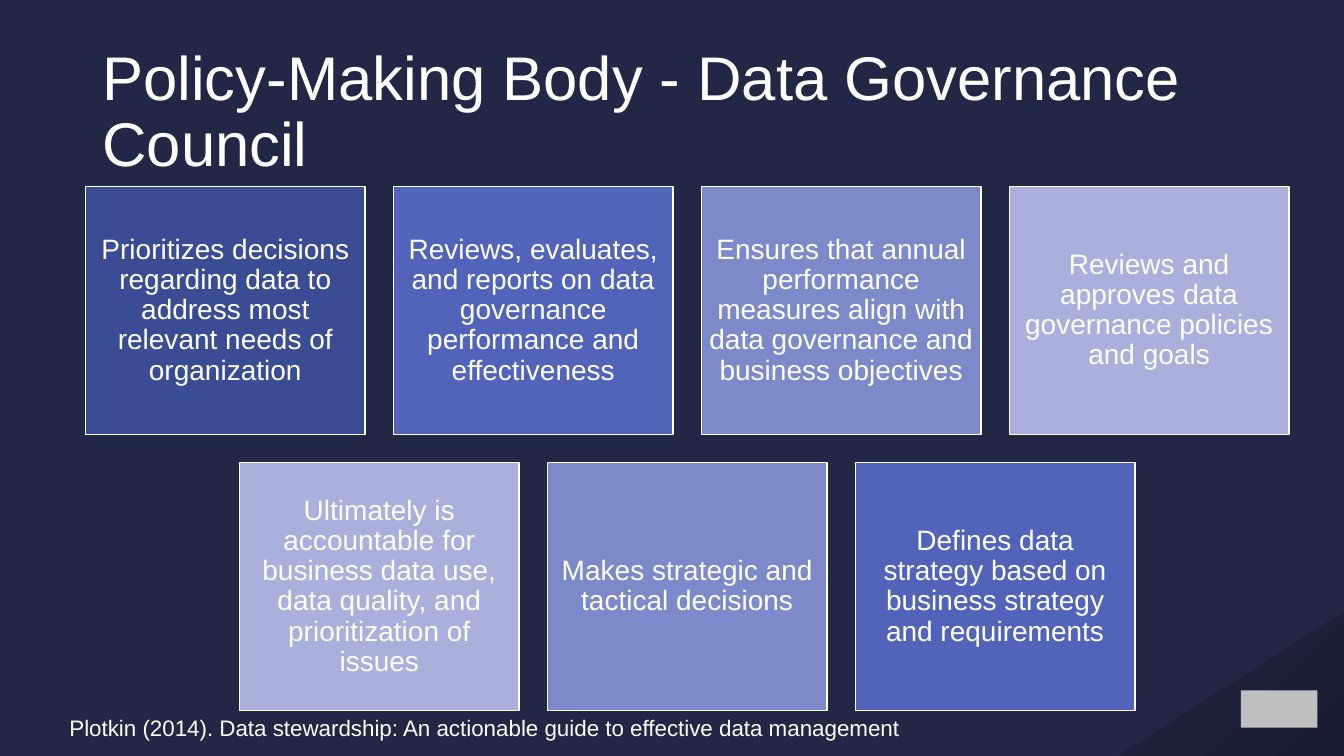
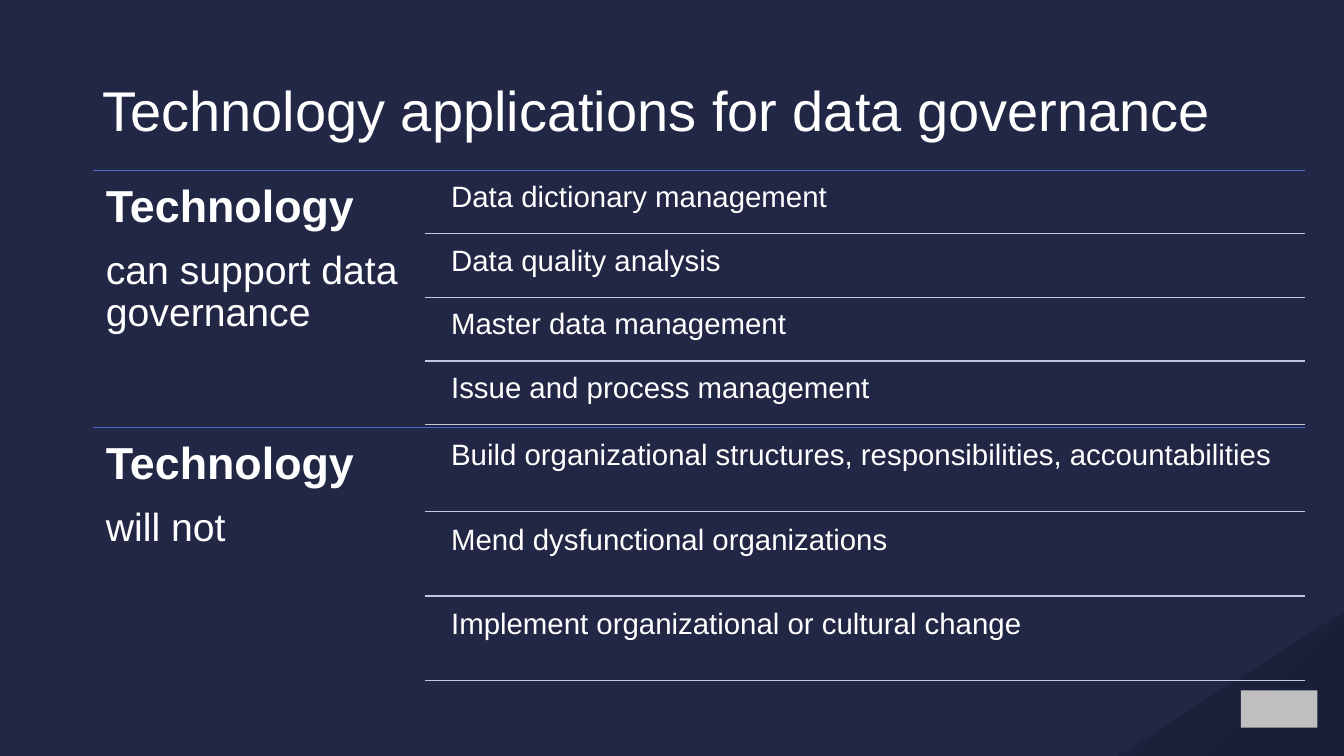
from lxml.etree import SubElement
from pptx import Presentation
from pptx.dml.color import RGBColor
from pptx.enum.shapes import MSO_CONNECTOR, MSO_SHAPE
from pptx.enum.text import MSO_ANCHOR, PP_ALIGN
from pptx.oxml.ns import qn
from pptx.util import Cm, Pt

# Palette and font
FONT = "Arial"
NAVY = RGBColor(0x21, 0x27, 0x45)
CORNER_LIGHT = RGBColor(0x1E, 0x23, 0x3E)
CORNER_DARK = RGBColor(0x19, 0x1D, 0x34)
WHITE = RGBColor(0xFF, 0xFF, 0xFF)
GREY = RGBColor(0xBF, 0xBF, 0xBF)
RULE_BLUE = RGBColor(0x4E, 0x67, 0xC8)
RULE_PALE = RGBColor(0xC2, 0xC7, 0xE6)
BLUE_1 = RGBColor(0x3A, 0x4C, 0x94)
BLUE_2 = RGBColor(0x51, 0x64, 0xB9)
BLUE_3 = RGBColor(0x7D, 0x8A, 0xCA)
BLUE_4 = RGBColor(0xA8, 0xB0, 0xDB)

# Content
COUNCIL_TITLE = "Policy-Making Body - Data Governance Council"
COUNCIL_ROWS = [
    [
        ("Prioritizes decisions regarding data to address most relevant needs of organization", BLUE_1),
        ("Reviews, evaluates, and reports on data governance performance and effectiveness", BLUE_2),
        ("Ensures that annual performance measures align with data governance and business objectives", BLUE_3),
        ("Reviews and approves data governance policies and goals", BLUE_4),
    ],
    [
        ("Ultimately is accountable for business data use, data quality, and prioritization of issues", BLUE_4),
        ("Makes strategic and tactical decisions", BLUE_3),
        ("Defines data strategy based on business strategy and requirements", BLUE_2),
    ],
]
COUNCIL_SOURCE = "Plotkin (2014). Data stewardship: An actionable guide to effective data management"

TECH_TITLE = "Technology applications for data governance"
TECH_SECTIONS = [
    ("Technology", "can support data governance", [
        "Data dictionary management",
        "Data quality analysis",
        "Master data management",
        "Issue and process management",
    ]),
    ("Technology", "will not", [
        "Build organizational structures, responsibilities, accountabilities",
        "Mend dysfunctional organizations",
        "Implement organizational or cultural change",
    ]),
]

# Layout in centimetres
SLIDE_W, SLIDE_H = 33.87, 19.05
CARD_W, CARD_H, CARD_GAP = 7.05, 6.25, 0.71
CARDS_TOP, CARDS_CENTER = 4.7, 17.32
SECTION_X, SECTION_TOP, SECTION_H = 2.34, 4.29, 6.48
SPLIT_X, RIGHT_X, ITEM_INDENT = 10.72, 32.88, 0.42
ITEM_PAD = 0.05  # gap around items, as a share of their height


def write(tf, paras, inset=None, anchor=MSO_ANCHOR.TOP,
          align=PP_ALIGN.LEFT, spacing=0.9, after=0):
    """Fill a text frame with (text, size, bold) paragraphs."""
    tf.word_wrap = True
    tf.vertical_anchor = anchor
    if inset is not None:
        tf.margin_left = tf.margin_right = Cm(inset)
        tf.margin_top = tf.margin_bottom = Cm(inset)
    for i, (text, size, bold) in enumerate(paras):
        p = tf.paragraphs[0] if i == 0 else tf.add_paragraph()
        p.alignment = align
        p.line_spacing = spacing
        p.space_after = Pt(after)
        r = p.add_run()
        r.text = text
        r.font.name = FONT
        r.font.size = Pt(size)
        r.font.bold = bold
        r.font.color.rgb = WHITE


def add_text(s, x, y, w, h, paras, **style):
    sp = s.shapes.add_textbox(Cm(x), Cm(y), Cm(w), Cm(h))
    write(sp.text_frame, paras, **style)


def add_box(s, x, y, w, h, fill, line=None):
    sp = s.shapes.add_shape(MSO_SHAPE.RECTANGLE, Cm(x), Cm(y), Cm(w), Cm(h))
    sp.shadow.inherit = False
    sp.fill.solid()
    sp.fill.fore_color.rgb = fill
    if line is None:
        sp.line.fill.background()
    else:
        sp.line.color.rgb = line
        sp.line.width = Pt(1)
    return sp


def add_rule(s, x1, x2, y, color):
    ln = s.shapes.add_connector(MSO_CONNECTOR.STRAIGHT, Cm(x1), Cm(y), Cm(x2), Cm(y))
    ln.line.color.rgb = color
    ln.line.width = Pt(1)
    SubElement(ln._element.spPr, qn("a:effectLst"))


def add_corner(s):
    left, top = SLIDE_W - 5.7, SLIDE_H - 3.63
    fb = s.shapes.build_freeform(Cm(left), Cm(SLIDE_H))
    fb.add_line_segments([(Cm(SLIDE_W), Cm(top)), (Cm(SLIDE_W), Cm(SLIDE_H))])
    sp = fb.convert_to_shape()
    sp.shadow.inherit = False
    sp.line.fill.background()
    sp.fill.gradient()
    sp.fill.gradient_angle = 315
    stops = [(0.06, CORNER_LIGHT), (1, CORNER_DARK)]
    for stop, (position, color) in zip(sp.fill.gradient_stops, stops):
        stop.position = position
        stop.color.rgb = color


def add_slide(prs, title, size):
    """Blank slide with background, corner, plain mark and title."""
    s = prs.slides.add_slide(prs.slide_layouts[6])
    s.background.fill.solid()
    s.background.fill.fore_color.rgb = NAVY
    add_corner(s)
    add_box(s, 31.27, 17.4, 1.93, 0.94, GREY)
    add_text(s, 2.33, 1.02, 29.21, 3.68, [(title, size, False)],
             anchor=MSO_ANCHOR.MIDDLE)
    return s


def council_slide(prs):
    s = add_slide(prs, COUNCIL_TITLE, 44)
    # Centred rows of cards
    for row, cards in enumerate(COUNCIL_ROWS):
        row_w = len(cards) * (CARD_W + CARD_GAP) - CARD_GAP
        y = CARDS_TOP + row * (CARD_H + CARD_GAP)
        for col, (text, fill) in enumerate(cards):
            x = CARDS_CENTER - row_w / 2 + col * (CARD_W + CARD_GAP)
            sp = add_box(s, x, y, CARD_W, CARD_H, fill, WHITE)
            write(sp.text_frame, [(text, 20, False)], inset=0.2,
                  anchor=MSO_ANCHOR.MIDDLE, align=PP_ALIGN.CENTER)
    # Source line
    add_text(s, 1.5, 17.88, 22, 0.94, [(COUNCIL_SOURCE, 16, False)], spacing=1)


def technology_slide(prs):
    s = add_slide(prs, TECH_TITLE, 40)
    for i, (head, detail, items) in enumerate(TECH_SECTIONS):
        top = SECTION_TOP + i * SECTION_H
        # Section rule and label
        add_rule(s, SECTION_X, RIGHT_X, top, RULE_BLUE)
        add_text(s, SECTION_X, top, SPLIT_X - SECTION_X, SECTION_H,
                 [(head, 32, True), (detail, 28, False)], inset=0.33, after=13.5)
        # Items share the section height, each with a rule below
        item_h = SECTION_H / (len(items) * (1 + ITEM_PAD) + ITEM_PAD)
        pad = item_h * ITEM_PAD
        item_x = SPLIT_X + ITEM_INDENT
        for n, item in enumerate(items):
            y = top + pad + n * (item_h + pad)
            add_text(s, item_x, y, RIGHT_X - item_x, item_h,
                     [(item, 21, False)], inset=0.23)
            add_rule(s, SPLIT_X, RIGHT_X, y + item_h, RULE_PALE)


def main():
    prs = Presentation()
    prs.slide_width, prs.slide_height = Cm(SLIDE_W), Cm(SLIDE_H)
    council_slide(prs)
    technology_slide(prs)
    prs.save("out.pptx")


if __name__ == "__main__":
    main()
